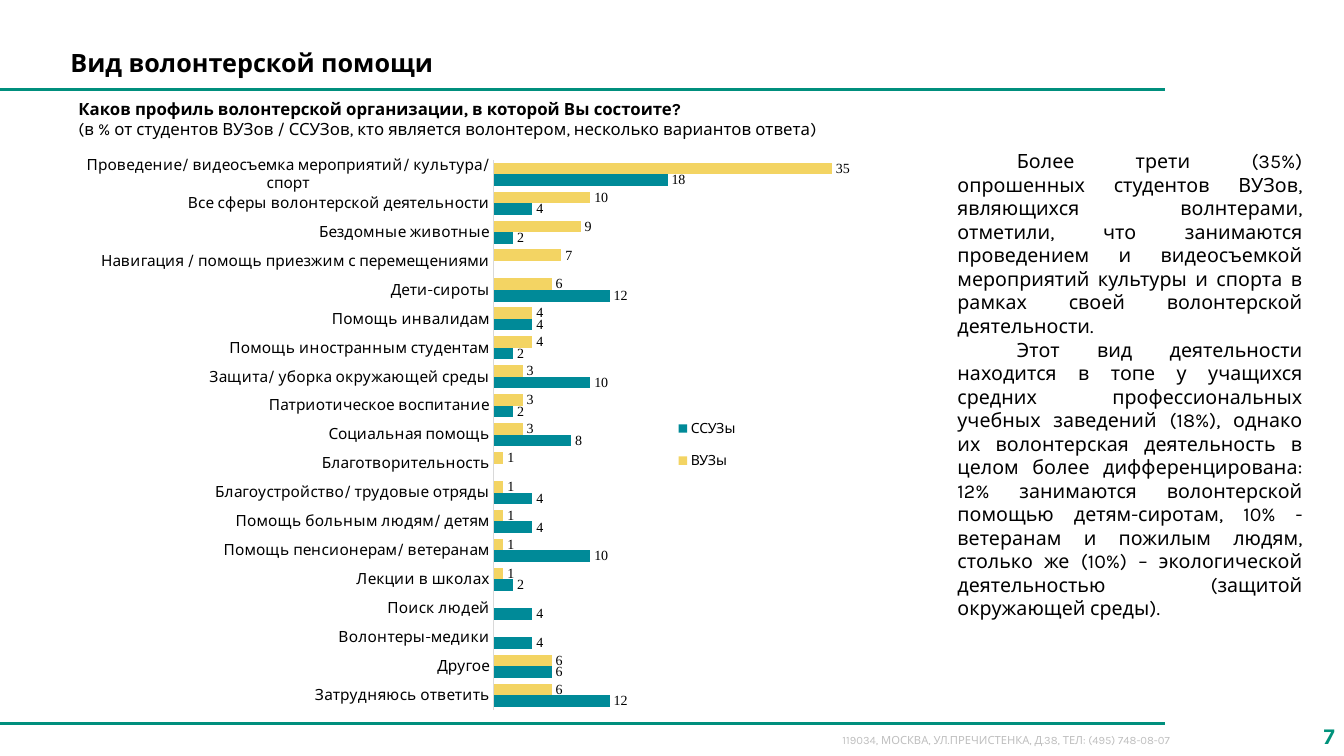
from lxml.etree import SubElement
from pptx import Presentation
from pptx.chart.data import CategoryChartData
from pptx.dml.color import RGBColor
from pptx.enum.chart import XL_CHART_TYPE, XL_LABEL_POSITION, XL_LEGEND_POSITION, XL_TICK_MARK
from pptx.enum.shapes import MSO_CONNECTOR
from pptx.enum.text import MSO_ANCHOR, PP_ALIGN
from pptx.oxml.ns import qn
from pptx.util import Pt

BODY_FONT = "Karla"
NUMBER_FONT = "Times New Roman"
GREEN, BLACK = "008F7D", "000000"

HELP_TYPES = [
    ("Проведение/ видеосъемка мероприятий/ культура/ спорт", 35, 18),
    ("Все сферы волонтерской деятельности", 10, 4),
    ("Бездомные животные", 9, 2),
    ("Навигация / помощь приезжим с перемещениями", 7, None),
    ("Дети-сироты", 6, 12),
    ("Помощь инвалидам", 4, 4),
    ("Помощь иностранным студентам", 4, 2),
    ("Защита/ уборка окружающей среды", 3, 10),
    ("Патриотическое воспитание", 3, 2),
    ("Социальная помощь", 3, 8),
    ("Благотворительность", 1, None),
    ("Благоустройство/ трудовые отряды", 1, 4),
    ("Помощь больным людям/ детям", 1, 4),
    ("Помощь пенсионерам/ ветеранам", 1, 10),
    ("Лекции в школах", 1, 2),
    ("Поиск людей", None, 4),
    ("Волонтеры-медики", None, 4),
    ("Другое", 6, 6),
    ("Затрудняюсь ответить", 6, 12),
]
FINDINGS = [
    "Более трети (35%) опрошенных студентов ВУЗов, являющихся волнтерами, отметили, "
    "что занимаются проведением и видеосъемкой мероприятий культуры и спорта в рамках "
    "своей волонтерской деятельности.",
    "Этот вид деятельности находится в топе у учащихся средних профессиональных учебных "
    "заведений (18%), однако их волонтерская деятельность в целом более "
    "дифференцирована: 12% занимаются волонтерской помощью детям-сиротам, 10% - "
    "ветеранам и пожилым людям, столько же (10%) – экологической деятельностью "
    "(защитой окружающей среды).",
]


def color(hex_code):
    """Turn a hex string into a colour."""
    return RGBColor.from_string(hex_code)


def style_font(font, size, name=BODY_FONT, hex_code=BLACK, bold=False):
    """Set typeface, size, colour and weight."""
    font.name, font.size, font.bold = name, Pt(size), bold
    font.color.rgb = color(hex_code)


def add_rule(slide, top):
    """Draw a green rule from the left edge."""
    rule = slide.shapes.add_connector(MSO_CONNECTOR.STRAIGHT, Pt(0), Pt(top), Pt(832.3), Pt(top))
    rule.line.color.rgb = color(GREEN)
    rule.line.width = Pt(2)
    SubElement(rule._element.spPr, qn("a:effectLst"))


def add_text(slide, box, lines, size, hex_code=BLACK, align=PP_ALIGN.LEFT,
             anchor=MSO_ANCHOR.TOP, indent=0):
    """Write (text, bold) lines as paragraphs of one wrapped box."""
    frame = slide.shapes.add_textbox(*map(Pt, box)).text_frame
    frame.word_wrap = True
    frame.vertical_anchor = anchor
    for index, (text, bold) in enumerate(lines):
        paragraph = frame.paragraphs[0] if index == 0 else frame.add_paragraph()
        paragraph.alignment = align
        if indent:
            paragraph._p.get_or_add_pPr().set("indent", str(Pt(indent)))
        run = paragraph.add_run()
        run.text = text
        style_font(run.font, size, hex_code=hex_code, bold=bold)


def place(element, layout, inner=False):
    """Give a chart part a manual layout as fractions of the chart."""
    for previous in element.findall(qn("c:layout")):
        element.remove(previous)
    holder = SubElement(element, qn("c:layout"))
    manual = SubElement(holder, qn("c:manualLayout"))
    settings = [("layoutTarget", "inner")] if inner else []
    settings += [("xMode", "edge"), ("yMode", "edge"), *zip("xywh", layout)]
    for tag, setting in settings:
        SubElement(manual, qn(f"c:{tag}")).set("val", str(setting))
    element.insert(0 if inner else 1, holder)


def style_series(series, hex_code):
    """Colour a series and show its values."""
    series.format.fill.solid()
    series.format.fill.fore_color.rgb = color(hex_code)
    series.invert_if_negative = False
    labels = series.data_labels
    labels.show_value = True
    labels.number_format, labels.number_format_is_linked = "#,##0", False
    labels.position = XL_LABEL_POSITION.OUTSIDE_END
    style_font(labels.font, 10, NUMBER_FONT)


def add_help_chart(slide, box):
    """Add the bar chart of volunteering profiles."""
    names, universities, colleges = zip(*HELP_TYPES)
    chart_data = CategoryChartData(number_format="#,##0")
    chart_data.categories = names
    chart_data.add_series("ВУЗы", universities)
    chart_data.add_series("ССУЗы", colleges)
    chart = slide.shapes.add_chart(XL_CHART_TYPE.BAR_CLUSTERED, *map(Pt, box), chart_data).chart
    chart.has_title = False
    style_font(chart.font, 10, NUMBER_FONT)

    plot = chart.plots[0]
    plot.gap_width, plot.overlap, plot.vary_by_categories = 50, 0, False
    for series, hex_code in zip(plot.series, ("F3D463", "008A98")):
        style_series(series, hex_code)

    help_axis = chart.category_axis
    help_axis.reverse_order = True
    help_axis.has_major_gridlines = False
    help_axis.major_tick_mark = help_axis.minor_tick_mark = XL_TICK_MARK.NONE
    help_axis.format.line.color.rgb = color("D9D9D9")
    help_axis.format.line.width = Pt(0.75)
    style_font(help_axis.tick_labels.font, 11)

    percent_axis = chart.value_axis
    percent_axis.minimum_scale, percent_axis.maximum_scale = 0, 40
    percent_axis.has_major_gridlines = False
    percent_axis.visible = False

    chart.has_legend = True
    chart.legend.position = XL_LEGEND_POSITION.RIGHT
    chart.legend.include_in_layout = False
    style_font(chart.legend.font, 10)
    place(chart.legend._element, (0.66, 0.45, 0.1, 0.14))
    place(plot._element.getparent(), (0.473, 0.027, 0.43, 0.952), inner=True)


def main():
    """Build the slide and save it."""
    deck = Presentation()
    deck.slide_width, deck.slide_height = Pt(960), Pt(540)
    slide = deck.slides.add_slide(deck.slide_layouts[6])
    for top in (517, 64.1):
        add_rule(slide, top)
    add_text(slide, (594.7, 520.6, 276.5, 17.3),
             [("119034, МОСКВА, УЛ.ПРЕЧИСТЕНКА, Д.38, ТЕЛ: (495) 748-08-07", False)], 8, "BFBFBF")
    add_text(slide, (910.8, 511.2, 49.7, 28.8), [("7", True)], 16, "00927B",
             PP_ALIGN.RIGHT, MSO_ANCHOR.MIDDLE)
    add_text(slide, (43.2, 18.7, 753.8, 40.3), [("Вид волонтерской помощи", True)], 18,
             anchor=MSO_ANCHOR.BOTTOM)
    add_text(slide, (49, 67, 789.8, 36), [
        ("Каков профиль волонтерской организации, в которой Вы состоите?", True),
        ("(в % от студентов ВУЗов / ССУЗов, кто является волонтером, "
         "несколько вариантов ответа)", False),
    ], 12)
    add_text(slide, (676.8, 103, 260.6, 312.5), [(finding, False) for finding in FINDINGS], 14,
             align=PP_ALIGN.JUSTIFY, indent=42.5)
    add_help_chart(slide, (49, 103, 642.2, 412.6))
    deck.save("out.pptx")


if __name__ == "__main__":
    main()
